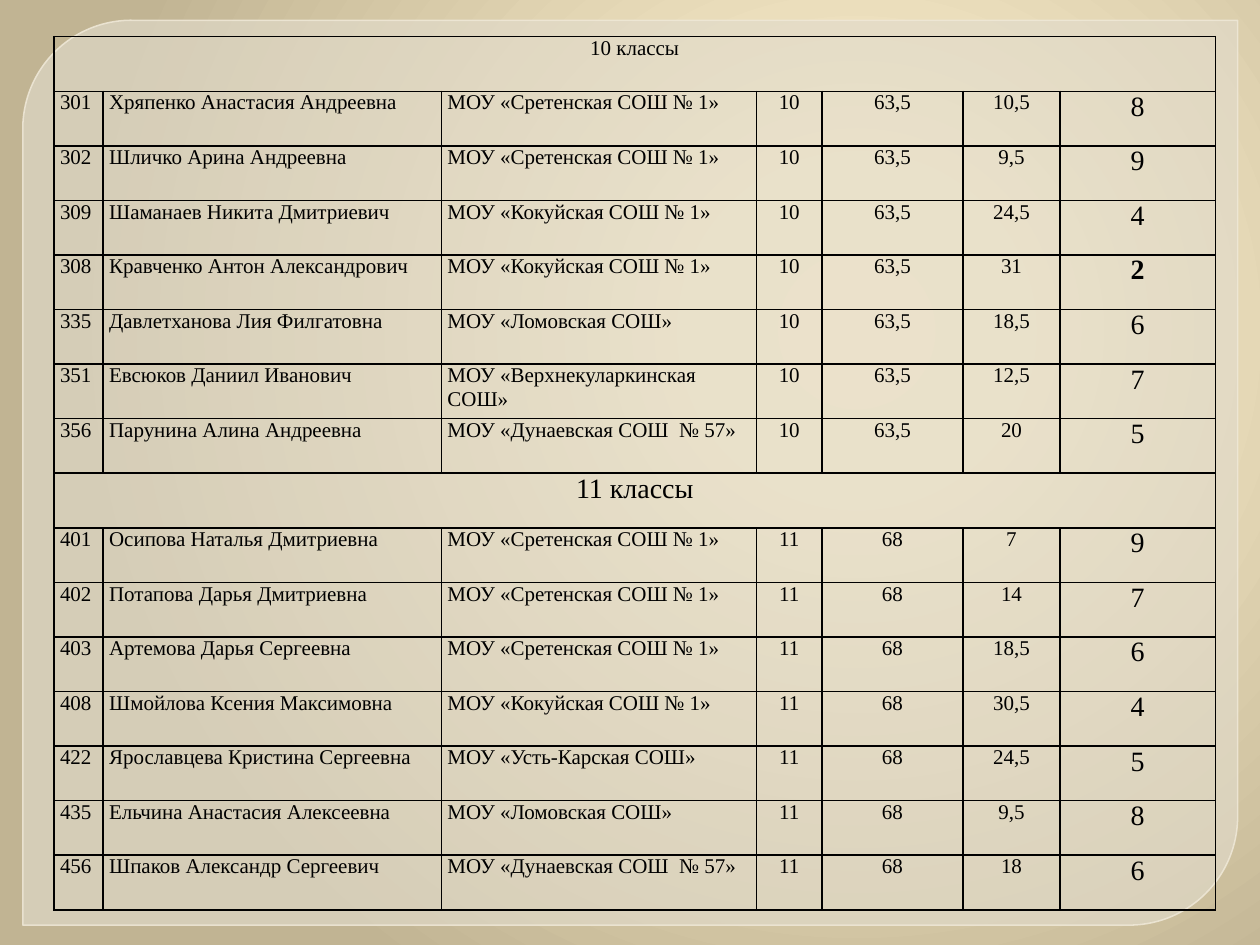
from pptx import Presentation
from pptx.dml.color import RGBColor as RGB
from pptx.enum.shapes import MSO_SHAPE as Shape
from pptx.enum.text import PP_ALIGN as Align
from pptx.oxml import parse_xml
from pptx.oxml.ns import nsdecls, qn
from pptx.util import Cm, Pt
from lxml.etree import SubElement as Sub

BLACK = RGB(0, 0, 0)
PANEL = RGB(0xE1, 0xDB, 0xCB)
EDGE = RGB(0xEF, 0xE8, 0xD7)
GLOW = RGB(0xFE, 0xEF, 0xCB)
CREAM = RGB(0xFA, 0xED, 0xCA)
SAND = RGB(0xC1, 0xB4, 0x93)

WIDTHS = [0.99, 6.82, 6.35, 1.32, 2.84, 1.96, 3.13]
ROW = 1.1

SRET = "МОУ «Сретенская СОШ № 1»"
KOK = "МОУ «Кокуйская СОШ № 1»"
LOM = "МОУ «Ломовская СОШ»"
DUN = "МОУ «Дунаевская СОШ  № 57»"
VERH = "МОУ «Верхнекуларкинская  СОШ»"
UST = "МОУ «Усть-Карская СОШ»"

GROUPS = [
    ("10", "63,5", 12, [
        ("301", "Хряпенко Анастасия Андреевна", SRET, "10,5", "8"),
        ("302", "Шличко Арина Андреевна", SRET, "9,5", "9"),
        ("309", "Шаманаев Никита Дмитриевич", KOK, "24,5", "4"),
        ("308", "Кравченко Антон Александрович", KOK, "31", "2"),
        ("335", "Давлетханова Лия Филгатовна", LOM, "18,5", "6"),
        ("351", "Евсюков Даниил Иванович", VERH, "12,5", "7"),
        ("356", "Парунина Алина Андреевна", DUN, "20", "5"),
    ]),
    ("11", "68", 16, [
        ("401", "Осипова Наталья Дмитриевна", SRET, "7", "9"),
        ("402", "Потапова Дарья Дмитриевна", SRET, "14", "7"),
        ("403", "Артемова Дарья Сергеевна", SRET, "18,5", "6"),
        ("408", "Шмойлова Ксения Максимовна", KOK, "30,5", "4"),
        ("422", "Ярославцева Кристина Сергеевна", UST, "24,5", "5"),
        ("435", "Ельчина Анастасия Алексеевна", LOM, "9,5", "8"),
        ("456", "Шпаков Александр Сергеевич", DUN, "18", "6"),
    ]),
]


class Deck:
    font = "Times New Roman"
    ink = BLACK

    def __init__(self):
        self.prs = Presentation()
        self.prs.slide_width, self.prs.slide_height = Cm(25.4), Cm(19.05)
        self.slide = self.prs.slides.add_slide(self.prs.slide_layouts[6])

    def backdrop(self, stops):
        self.slide.background.fill.solid()
        props = self.slide.element.find(".//" + qn("p:bgPr"))
        marks = "".join(
            f'<a:gs pos="{pos * 1000}"><a:srgbClr val="{tint}"/></a:gs>'
            for pos, tint in stops)
        grad = parse_xml(
            f'<a:gradFill {nsdecls("a")} rotWithShape="1"><a:gsLst>{marks}</a:gsLst>'
            '<a:path path="circle"><a:fillToRect l="68000" t="35000" '
            'r="32000" b="65000"/></a:path></a:gradFill>')
        props.replace(props[0], grad)

    def fade(self, fill, share):
        tint = fill.find(qn("a:solidFill"))[0]
        Sub(tint, qn("a:alpha")).set("val", str(share * 1000))

    def panel(self, x, y, w, h):
        box = self.slide.shapes.add_shape(
            Shape.ROUND_2_DIAG_RECTANGLE, Cm(x), Cm(y), Cm(w), Cm(h))
        box.shadow.inherit = False
        box.adjustments[0], box.adjustments[1] = 0.12, 0
        box.fill.solid()
        box.fill.fore_color.rgb = PANEL
        box.line.color.rgb = EDGE
        box.line.width = Pt(0.87)
        props = box.element.spPr
        self.fade(props, 65)
        self.fade(props.find(qn("a:ln")), 88)

    def grid(self, x, y, widths, rows):
        frame = self.slide.shapes.add_table(
            rows, len(widths), Cm(x), Cm(y), Cm(sum(widths)), Cm(ROW * rows))
        table = frame.table
        table.first_row = table.horz_banding = False
        for col, wide in zip(table.columns, widths):
            col.width = Cm(wide)
        for row in table.rows:
            row.height = Cm(ROW)
            for cell in row.cells:
                self.border(cell)
        return table

    def border(self, cell):
        cell.margin_left = cell.margin_right = Cm(0.12)
        cell.margin_top = cell.margin_bottom = 0
        props = cell._tc.get_or_add_tcPr()
        for side in ("lnL", "lnR", "lnT", "lnB"):
            props.append(parse_xml(
                f'<a:{side} {nsdecls("a")} w="12700"><a:solidFill>'
                f'<a:srgbClr val="{self.ink}"/></a:solidFill></a:{side}>'))
        cell.fill.background()

    def label(self, cell, text, size=12, align=Align.CENTER, bold=False):
        para = cell.text_frame.paragraphs[0]
        para.text = text
        para.alignment = align
        font = para.runs[0].font
        font.name, font.size, font.bold = self.font, Pt(size), bold
        font.color.rgb = self.ink


def main():
    deck = Deck()
    deck.backdrop([(0, GLOW), (20, CREAM), (100, SAND)])
    deck.panel(0.46, 0.41, 24.49, 18.24)
    count = sum(len(pupils) + 1 for *_, pupils in GROUPS)
    table = deck.grid(1.09, 0.74, WIDTHS, count)
    last = len(WIDTHS) - 1
    row = 0
    for grade, top, size, pupils in GROUPS:
        head = table.cell(row, 0)
        head.merge(table.cell(row, last))
        deck.label(head, f"{grade} классы", size)
        for row, (code, name, school, score, place) in enumerate(pupils, row + 1):
            line = (code, name, school, grade, top, score)
            for col, text in enumerate(line):
                align = Align.LEFT if col < 3 else Align.CENTER
                deck.label(table.cell(row, col), text, align=align)
            deck.label(table.cell(row, last), place, 16, bold=place == "2")
        row += 1
    deck.prs.save("out.pptx")


if __name__ == "__main__":
    main()
